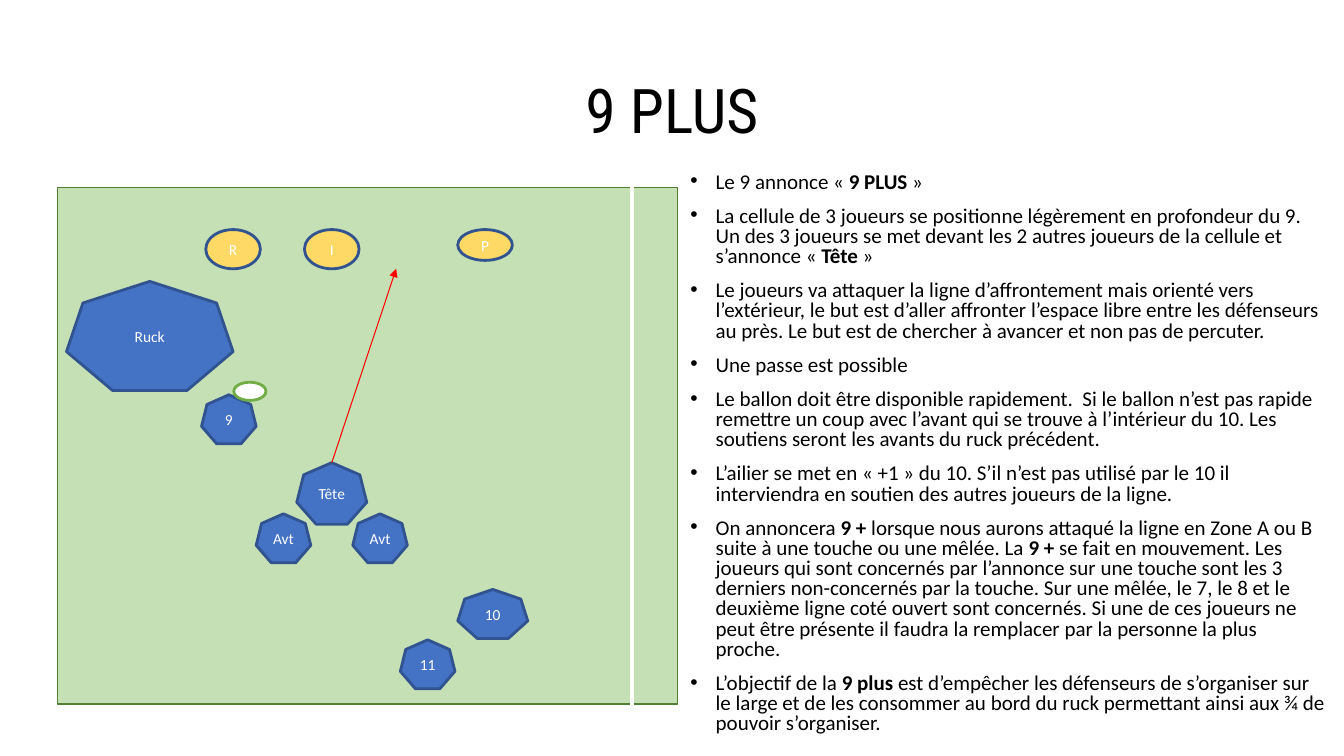
from dataclasses import dataclass

from pptx import Presentation
from pptx import util as u
from pptx.dml.color import RGBColor
from pptx.enum import shapes, text
from pptx.oxml.ns import qn

HUES = {
    "black": "000000", "white": "FFFFFF", "grass": "C5E0B4", "edge": "527F34",
    "blue": "4472C4", "navy": "31538F", "gold": "FFD966", "green": "70AD47",
    "red": "FF0000",
}
FORM = shapes.MSO_SHAPE


@dataclass
class Mark:
    left: float
    top: float
    wide: float
    high: float
    label: str = ""
    form: FORM = FORM.HEPTAGON
    fill: str = "blue"
    edge: str = "navy"
    width: float = 2


@dataclass
class Stroke:
    start: tuple[float, float]
    end: tuple[float, float]
    hue: str
    width: float
    arrow: bool = False


PITCH = Mark(41, 134, 443, 369, "", FORM.RECTANGLE, "grass", "edge", 1)

# Attack, ball and defence
MARKS = [
    Mark(47.5, 201, 119, 78, "Ruck"),
    Mark(144, 282, 39, 35, "9"),
    Mark(252, 367, 39, 35, "Avt"),
    Mark(183, 367, 39, 35, "Avt"),
    Mark(212, 330.5, 50, 44, "Tête"),
    Mark(327, 421, 50, 35, "10"),
    Mark(286, 457, 39, 35, "11"),
    Mark(167, 273, 23, 13, "", FORM.OVAL, "white", "green"),
    Mark(147, 164, 39, 28, "R", FORM.OVAL, "gold"),
    Mark(217.5, 164, 39, 28, "I", FORM.OVAL, "gold"),
    Mark(327, 164, 39, 22, "P", FORM.OVAL, "gold"),
]

TOUCH = Stroke((451.5, 104.5), (451.5, 517), "white", 2.25)
RUN = Stroke((237, 330.5), (283, 192), "red", 0.75, True)

# Asterisks enclose bold words
NOTES = [
    "Le 9 annonce « *9 PLUS* »",
    "La cellule de 3 joueurs se positionne légèrement en profondeur du 9. "
    "Un des 3 joueurs se met devant les 2 autres joueurs de la cellule et "
    "s’annonce « *Tête* »",
    "Le joueurs va attaquer la ligne d’affrontement mais orienté vers "
    "l’extérieur, le but est d’aller affronter l’espace libre entre les "
    "défenseurs au près. Le but est de chercher à avancer et non pas de percuter.",
    "Une passe est possible",
    "Le ballon doit être disponible rapidement.  Si le ballon n’est pas rapide "
    "remettre un coup avec l’avant qui se trouve à l’intérieur du 10. Les "
    "soutiens seront les avants du ruck précédent.",
    "L’ailier se met en « +1 » du 10. S’il n’est pas utilisé par le 10 il "
    "interviendra en soutien des autres joueurs de la ligne.",
    "On annoncera *9 + *lorsque nous aurons attaqué la ligne en Zone A ou B "
    "suite à une touche ou une mêlée. La *9 + *se fait en mouvement. Les "
    "joueurs qui sont concernés par l’annonce sur une touche sont les 3 "
    "derniers non-concernés par la touche. Sur une mêlée, le 7, le 8 et le "
    "deuxième ligne coté ouvert sont concernés. Si une de ces joueurs ne peut "
    "être présente il faudra la remplacer par la personne la plus proche.",
    "L’objectif de la *9 plus *est d’empêcher les défenseurs de s’organiser "
    "sur le large et de les consommer au bord du ruck permettant ainsi aux ¾ "
    "de pouvoir s’organiser.",
]


def tint(name: str) -> RGBColor:
    return RGBColor.from_string(HUES[name])


def style(para, size: float, hue: str, face: str = "Calibri") -> None:
    para.font.size = u.Pt(size)
    para.font.name = face
    para.font.color.rgb = tint(hue)


def place(shape, left: float, top: float, wide: float, high: float) -> None:
    shape.left, shape.top = u.Pt(left), u.Pt(top)
    shape.width, shape.height = u.Pt(wide), u.Pt(high)


def draw_mark(slide, mark: Mark) -> None:
    box = map(u.Pt, (mark.left, mark.top, mark.wide, mark.high))
    shape = slide.shapes.add_shape(mark.form, *box)
    shape.shadow.inherit = False
    shape.fill.solid()
    shape.fill.fore_color.rgb = tint(mark.fill)
    shape.line.color.rgb = tint(mark.edge)
    shape.line.width = u.Pt(mark.width)
    if mark.label:
        frame = shape.text_frame
        frame.word_wrap = False
        frame.vertical_anchor = text.MSO_ANCHOR.MIDDLE
        para = frame.paragraphs[0]
        para.text = mark.label
        para.alignment = text.PP_ALIGN.CENTER
        style(para, 11, "white")


def draw_stroke(slide, stroke: Stroke) -> None:
    ends = map(u.Pt, (*stroke.start, *stroke.end))
    line = slide.shapes.add_connector(shapes.MSO_CONNECTOR.STRAIGHT, *ends)
    line.line.color.rgb = tint(stroke.hue)
    line.line.width = u.Pt(stroke.width)
    props = line._element.spPr
    if stroke.arrow:
        tail = props.find(qn("a:ln")).makeelement(qn("a:tailEnd"), {"type": "triangle"})
        props.find(qn("a:ln")).append(tail)
    props.append(props.makeelement(qn("a:effectLst"), {}))


def write_title(shape) -> None:
    place(shape, 66, 29, 828, 104)
    frame = shape.text_frame
    frame.auto_size = text.MSO_AUTO_SIZE.NONE
    frame.vertical_anchor = text.MSO_ANCHOR.MIDDLE
    para = frame.paragraphs[0]
    para.text = "9 PLUS"
    para.alignment = text.PP_ALIGN.CENTER
    para.line_spacing = 0.9
    style(para, 44, "black", "Roboto Condensed")


def write_notes(shape) -> None:
    place(shape, 486, 120, 468, 420)
    frame = shape.text_frame
    frame.auto_size = text.MSO_AUTO_SIZE.NONE
    for rank, note in enumerate(NOTES):
        para = frame.add_paragraph() if rank else frame.paragraphs[0]
        for turn, part in enumerate(note.split("*")):
            run = para.add_run()
            run.text = part
            if turn % 2:
                run.font.bold = True
        para.line_spacing = 0.8
        para.space_before = u.Pt(10 if rank else 0)
        style(para, 15, "black")
        # Hanging indent for the bullet
        props = para._p.get_or_add_pPr()
        props.set("marL", str(u.Pt(18)))
        props.set("indent", str(u.Pt(-18)))


def main() -> None:
    deck = Presentation()
    deck.slide_width, deck.slide_height = u.Pt(960), u.Pt(540)
    slide = deck.slides.add_slide(deck.slide_layouts[1])
    write_title(slide.shapes.title)
    write_notes(slide.placeholders[1])

    # Pitch with its touchline, then the players and the run
    draw_mark(slide, PITCH)
    draw_stroke(slide, TOUCH)
    for mark in MARKS:
        draw_mark(slide, mark)
    draw_stroke(slide, RUN)
    deck.save("out.pptx")


if __name__ == "__main__":
    main()
